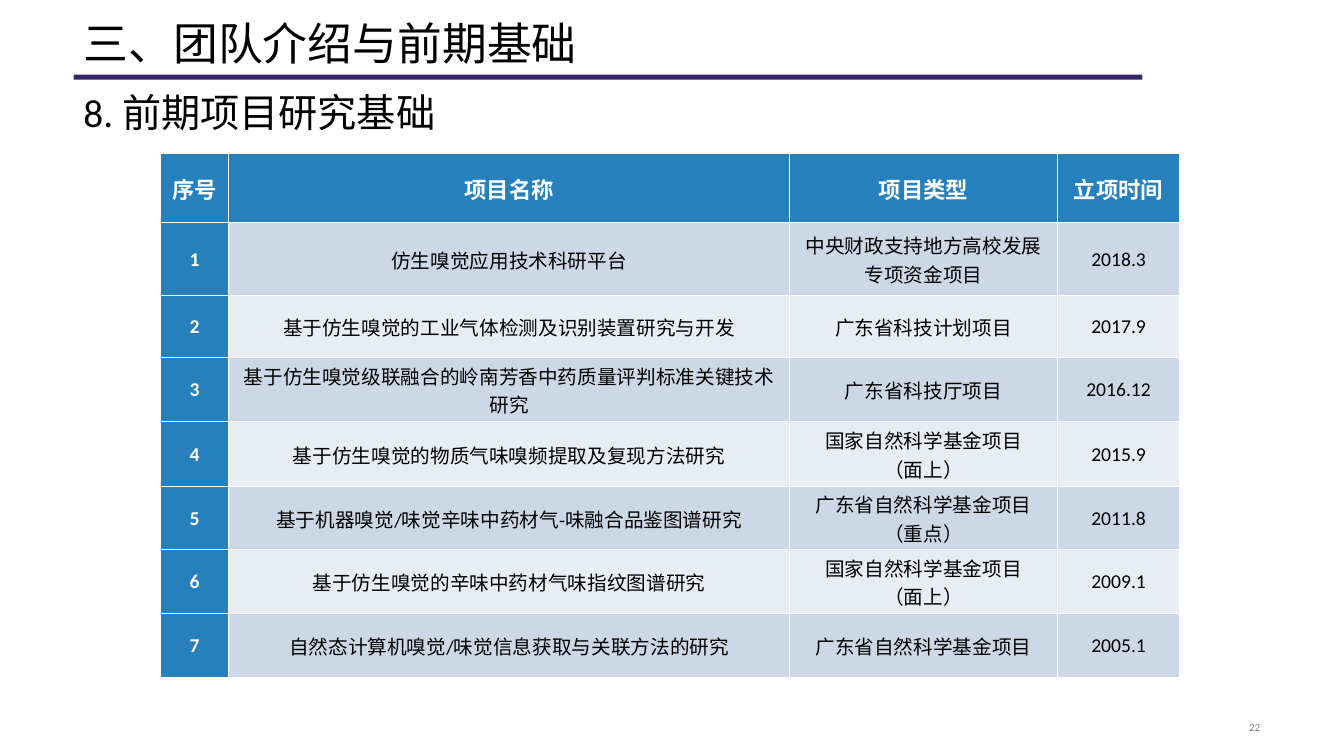
"""Build the slide that lists the team's earlier research projects."""
from pptx import Presentation, util as u
from pptx.dml.color import RGBColor
from pptx.enum import shapes, text

BLACK = RGBColor(0x00, 0x00, 0x00)
WHITE = RGBColor(0xFF, 0xFF, 0xFF)
GREY = RGBColor(0x80, 0x80, 0x80)
INDIGO = RGBColor(0x36, 0x25, 0x69)
BLUE = RGBColor(0x25, 0x80, 0xBC)
BANDS = [RGBColor(0xE8, 0xED, 0xF3), RGBColor(0xCD, 0xD8, 0xE7)]

LEFT, WIDTH = 0.73, 11.87
COLUMNS = [0.68, 5.56, 2.66, 1.21]
ROWS = [0.69, 0.72, 0.62, 0.63, 0.65, 0.62, 0.64, 0.63]
HEADER = ["序号", "项目名称", "项目类型", "立项时间"]
PROJECTS = [
    ("仿生嗅觉应用技术科研平台", "中央财政支持地方高校发展专项资金项目", "2018.3"),
    ("基于仿生嗅觉的工业气体检测及识别装置研究与开发", "广东省科技计划项目", "2017.9"),
    ("基于仿生嗅觉级联融合的岭南芳香中药质量评判标准关键技术研究", "广东省科技厅项目", "2016.12"),
    ("基于仿生嗅觉的物质气味嗅频提取及复现方法研究", "国家自然科学基金项目\n（面上）", "2015.9"),
    ("基于机器嗅觉/味觉辛味中药材气-味融合品鉴图谱研究", "广东省自然科学基金项目\n（重点）", "2011.8"),
    ("基于仿生嗅觉的辛味中药材气味指纹图谱研究", "国家自然科学基金项目\n（面上）", "2009.1"),
    ("自然态计算机嗅觉/味觉信息获取与关联方法的研究", "广东省自然科学基金项目", "2005.1"),
]


def style_text(frame, size, color, align, bold=False, spacing=1.0):
    """Format every paragraph and run of a text frame."""
    for para in frame.paragraphs:
        para.alignment = align
        para.line_spacing = spacing
        for span in para.runs:
            span.font.name = "Calibri"
            span.font.size = u.Pt(size)
            span.font.bold = bold
            span.font.color.rgb = color


def fill_box(box, words, place, anchor, size, color, align, spacing=1.0):
    """Place a text shape, fill it and format it."""
    box.left, box.top, box.width, box.height = [u.Inches(n) for n in place]
    frame = box.text_frame
    frame.text = words
    frame.word_wrap = True
    frame.auto_size = text.MSO_AUTO_SIZE.NONE
    frame.vertical_anchor = anchor
    style_text(frame, size, color, align, spacing=spacing)


deck = Presentation()
deck.slide_width, deck.slide_height = u.Inches(13.33), u.Inches(7.5)
page = deck.slides.add_slide(deck.slide_layouts[5])

rule = page.shapes.add_shape(shapes.MSO_SHAPE.RECTANGLE, u.Inches(LEFT),
                             u.Inches(0.74), u.Inches(10.6), u.Inches(0.05))
rule.shadow.inherit = False
rule.fill.solid()
rule.fill.fore_color.rgb = INDIGO
rule.line.fill.background()

fill_box(page.shapes.title, "三、团队介绍与前期基础", (LEFT, 0, WIDTH, 0.75),
         text.MSO_ANCHOR.BOTTOM, 32, BLACK, text.PP_ALIGN.LEFT, 0.9)
fill_box(page.shapes.add_textbox(0, 0, 0, 0), "8. 前期项目研究基础",
         (LEFT, 0.86, WIDTH, 0.55), text.MSO_ANCHOR.MIDDLE, 28, BLACK,
         text.PP_ALIGN.LEFT, 0.9)
fill_box(page.shapes.add_textbox(0, 0, 0, 0), "22", (9.42, 7.1, 3.18, 0.23),
         text.MSO_ANCHOR.MIDDLE, 8, GREY, text.PP_ALIGN.RIGHT)

table = page.shapes.add_table(
    len(ROWS), len(COLUMNS), u.Inches(1.59), u.Inches(1.52),
    u.Inches(sum(COLUMNS)), u.Inches(sum(ROWS))).table
table.first_col = True
for column, width in zip(table.columns, COLUMNS):
    column.width = u.Inches(width)
for row, height in zip(table.rows, ROWS):
    row.height = u.Inches(height)

records = [HEADER] + [(str(n), *project) for n, project in enumerate(PROJECTS, 1)]
for r, record in enumerate(records):
    for c, words in enumerate(record):
        heading = r == 0 or c == 0
        cell = table.cell(r, c)
        cell.text = words
        cell.vertical_anchor = text.MSO_ANCHOR.MIDDLE
        cell.margin_left = cell.margin_right = u.Inches(0.07)
        cell.margin_top, cell.margin_bottom = u.Inches(0.01), 0
        cell.fill.solid()
        cell.fill.fore_color.rgb = BLUE if heading else BANDS[r % 2]
        style_text(cell.text_frame, 16 if r == 0 else 14,
                   WHITE if heading else BLACK, text.PP_ALIGN.CENTER, heading)

deck.save("out.pptx")
